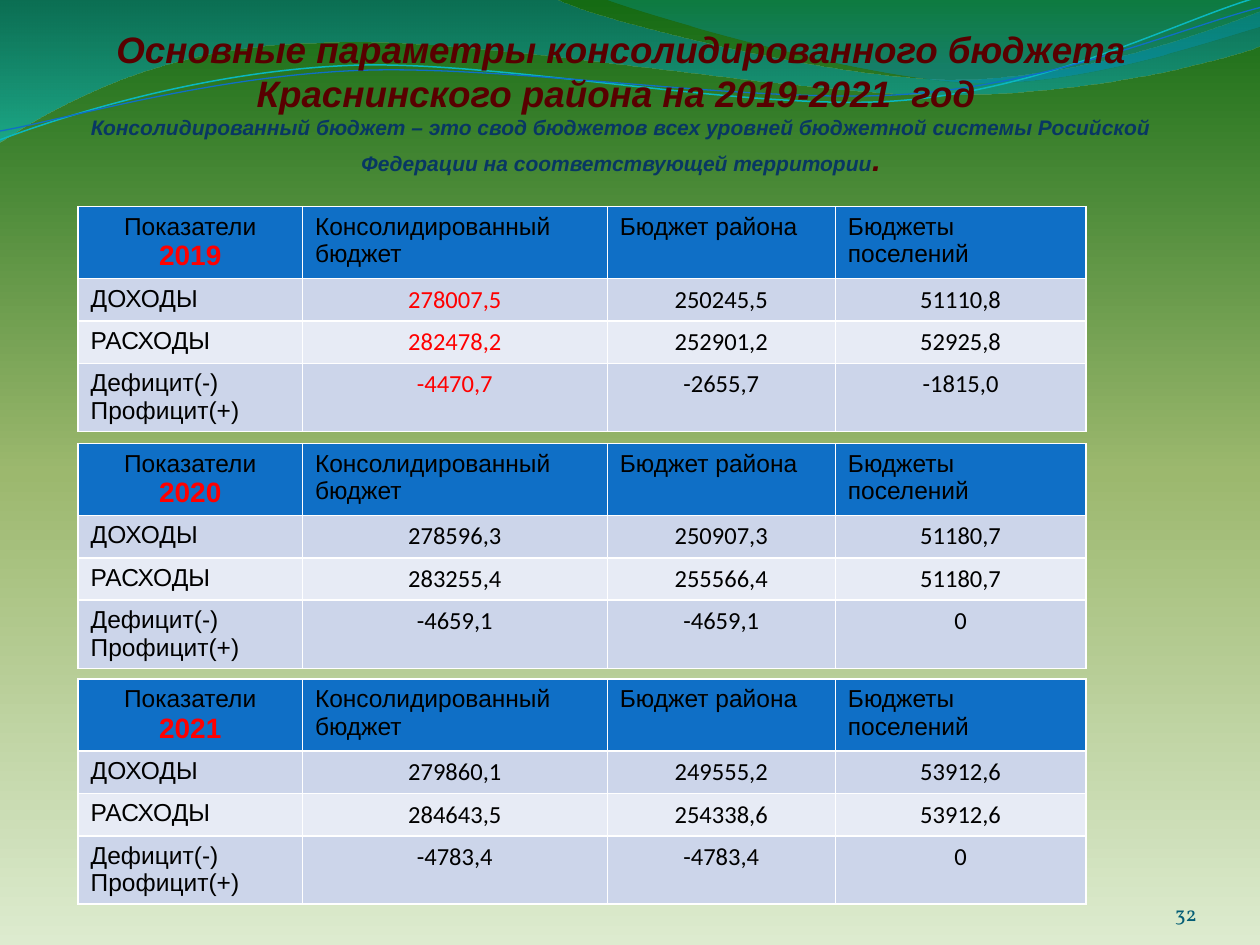
from lxml import etree
from pptx import Presentation
from pptx.dml.color import RGBColor
from pptx.enum.text import MSO_ANCHOR as Anchor, MSO_AUTO_SIZE as AutoSize, PP_ALIGN as Align
from pptx.oxml import parse_xml
from pptx.oxml.ns import nsdecls, qn
from pptx.util import Inches, Pt

MAROON = RGBColor(0x58, 0x00, 0x00)
NAVY = RGBColor(0x08, 0x37, 0x63)
BLACK = RGBColor(0x00, 0x00, 0x00)
RED = RGBColor(0xFF, 0x00, 0x00)
BLUE = RGBColor(0x0F, 0x6F, 0xC6)
CYAN = RGBColor(0x0A, 0xB8, 0xBF)
TEAL = RGBColor(0x04, 0x5D, 0x75)
WHITE = RGBColor(0xFF, 0xFF, 0xFF)
BAND_DARK = RGBColor(0xCC, 0xD5, 0xEA)
BAND_LIGHT = RGBColor(0xE7, 0xEB, 0xF5)


def set_gradient(properties, stops, angle):
    """Replace a solid fill by a gradient of (position, colour, opacity) stops."""
    marks = "".join(
        f'<a:gs pos="{place * 1000}"><a:srgbClr val="{colour}">'
        f'<a:alpha val="{opacity * 1000}"/></a:srgbClr></a:gs>'
        for place, colour, opacity in stops)
    gradient = parse_xml(
        f'<a:gradFill {nsdecls("a")} rotWithShape="1"><a:gsLst>{marks}</a:gsLst>'
        f'<a:lin ang="{angle * 60000}" scaled="0"/></a:gradFill>')
    properties.replace(properties.find(qn("a:solidFill")), gradient)


def add_wave(page, segments, closed):
    """Draw a path: two-number segments are lines, six-number ones Bezier curves."""
    anchors = [(Inches(segment[-2]), Inches(segment[-1])) for segment in segments]
    builder = page.shapes.build_freeform(*anchors[0])
    builder.add_line_segments(anchors[1:], close=closed)
    wave = builder.convert_to_shape()
    wave.shadow.inherit = False
    # Turn the straight parts into curves where control points are given
    lines = list(wave._element.iter(qn("a:lnTo")))
    for line, segment in zip(lines, segments[1:]):
        if len(segment) == 6:
            curve = etree.Element(qn("a:cubicBezTo"))
            for x, y in zip(segment[::2], segment[1::2]):
                etree.SubElement(curve, qn("a:pt"), x=str(Inches(x) - wave.left),
                                 y=str(Inches(y) - wave.top))
            line.getparent().replace(line, curve)
    return wave


deck = Presentation()
deck.slide_width, deck.slide_height = Inches(10), Inches(7.5)
page = deck.slides.add_slide(deck.slide_layouts[5])

# Background
page.background.fill.solid()
set_gradient(page.background._cSld.bg.bgPr,
             [(0, "DDEBCF", 100), (50, "9CB86E", 100), (100, "156B13", 100)], 270)

# Filled waves
filled_waves = [
    ([(0, -0.01), (4.4, -0.01), (4.76, 0.17, 6.64, 0.63, 7.58, 0.63),
      (8.53, 0.63, 9.58, 0.26, 10, 0.09), (10.01, 0.36),
      (9.83, 0.44, 8.7, 0.76, 7.46, 0.75), (6.22, 0.75, 3.82, 0.28, 2.57, 0.34),
      (1.29, 0.35, 0.46, 0.83, -0.01, 1.13)],
     [(0, "0074A1", 45), (100, "00C6CF", 55)]),
    ([(4.79, -0.01), (5.09, 0.11, 6.82, 0.62, 7.69, 0.65),
      (8.56, 0.69, 9.61, 0.32, 10, 0.21), (10, 0)],
     [(0, "00A1A9", 30), (80, "008BBF", 45)]),
]
for segments, stops in filled_waves:
    wave = add_wave(page, segments, True)
    wave.fill.solid()
    set_gradient(wave._element.spPr, stops, 90)
    wave.line.fill.background()

# Thin wave lines
wave_lines = [
    ([(0, 1.11), (0.48, 0.93, 1.58, 0.57, 2.77, 0.52),
      (3.95, 0.47, 5.93, 0.89, 7.13, 0.8), (8.33, 0.71, 9.38, 0.15, 9.98, -0.02)],
     CYAN, 0.85),
    ([(0, 1.04), (0.47, 0.96, 1.64, 0.61, 2.83, 0.56),
      (4.03, 0.51, 5.97, 0.83, 7.17, 0.75), (8.36, 0.67, 9.41, 0.21, 10, 0.06)],
     BLUE, 0.75),
]
for segments, colour, width in wave_lines:
    wave = add_wave(page, segments, False)
    wave.fill.background()
    wave.line.color.rgb = colour
    wave.line.width = Pt(width)

# Title, brought in front of the waves
title = page.shapes.title
page.shapes._spTree.append(title._element)
title.left, title.top, title.width, title.height = (
    Inches(0.62), Inches(0), Inches(8.62), Inches(1.41))
frame = title.text_frame
frame.word_wrap = True
frame.auto_size = AutoSize.NONE
frame.vertical_anchor = Anchor.BOTTOM
frame.margin_left = frame.margin_right = frame.margin_bottom = 0
frame.margin_top = Inches(0.05)
frame.text = ("Основные параметры консолидированного бюджета\n"
              "Краснинского района на 2019-2021  год \n"
              "Консолидированный бюджет – это свод бюджетов всех уровней бюджетной системы "
              "Росийской Федерации на соответствующей территории")
frame.paragraphs[2].add_run().text = "."
spans = [span for para in frame.paragraphs for span in para.runs]
for span, size, colour in zip(spans, (21, 21, 12, 18), (MAROON, MAROON, NAVY, MAROON)):
    span.font.name = "Arial"
    span.font.size = Pt(size)
    span.font.bold = span.font.italic = True
    span.font.color.rgb = colour
for para in frame.paragraphs:
    para.alignment = Align.CENTER

# Budget tables, one a year
headings = ["Консолидированный  бюджет", "Бюджет района", "Бюджеты поселений"]
indicators = ["ДОХОДЫ", "РАСХОДЫ", "Дефицит(-)\nПрофицит(+)"]
budgets = {
    "2019": [["278007,5", "250245,5", "51110,8"],
             ["282478,2", "252901,2", "52925,8"],
             ["-4470,7", "-2655,7", "-1815,0"]],
    "2020": [["278596,3", "250907,3", "51180,7"],
             ["283255,4", "255566,4", "51180,7"],
             ["-4659,1", "-4659,1", "0"]],
    "2021": [["279860,1", "249555,2", "53912,6"],
             ["284643,5", "254338,6", "53912,6"],
             ["-4783,4", "-4783,4", "0"]],
}
table_tops = [1.64, 3.52, 5.39]
column_widths = [1.78, 2.42, 1.81, 1.99]
row_heights = [0.57, 0.33, 0.33, 0.54]
row_fills = [BLUE, BAND_DARK, BAND_LIGHT, BAND_DARK]

for top, (year, values) in zip(table_tops, budgets.items()):
    rows = [[f"Показатели\n{year}"] + headings]
    rows += [[name] + numbers for name, numbers in zip(indicators, values)]
    table = page.shapes.add_table(
        4, 4, Inches(0.62), Inches(top),
        Inches(sum(column_widths)), Inches(sum(row_heights))).table
    for column, width in zip(table.columns, column_widths):
        column.width = Inches(width)
    for r, texts in enumerate(rows):
        table.rows[r].height = Inches(row_heights[r])
        for c, text in enumerate(texts):
            cell = table.cell(r, c)
            cell.text = text
            cell.fill.solid()
            cell.fill.fore_color.rgb = row_fills[r]
            is_number = r > 0 and c > 0
            for para in cell.text_frame.paragraphs:
                is_year = para.text == year
                centred = is_number or r == c == 0
                para.alignment = Align.CENTER if centred else Align.LEFT
                font = para.runs[0].font
                font.name = "Calibri" if is_number else "Arial"
                font.size = Pt(16 if is_year else 14)
                font.bold = is_year
                red = is_year or (is_number and c == 1 and year == "2019")
                font.color.rgb = RED if red else BLACK
            # Borders come before the fill in the cell properties
            for place, side in enumerate(("lnL", "lnR", "lnT", "lnB")):
                border = etree.Element(qn(f"a:{side}"), w=str(Pt(1)))
                paint = etree.SubElement(border, qn("a:solidFill"))
                etree.SubElement(paint, qn("a:srgbClr"), val=str(WHITE))
                cell._tc.tcPr.insert(place, border)

# Page number
box = page.shapes.add_textbox(Inches(8.67), Inches(6.95), Inches(0.83), Inches(0.4))
frame = box.text_frame
frame.word_wrap = True
frame.vertical_anchor = Anchor.BOTTOM
frame.margin_left = frame.margin_right = frame.margin_top = frame.margin_bottom = 0
frame.text = "32"
para = frame.paragraphs[0]
para.alignment = Align.RIGHT
font = para.runs[0].font
font.name, font.size = "Vollkorn", Pt(12)
font.color.rgb = TEAL

deck.save("out.pptx")
